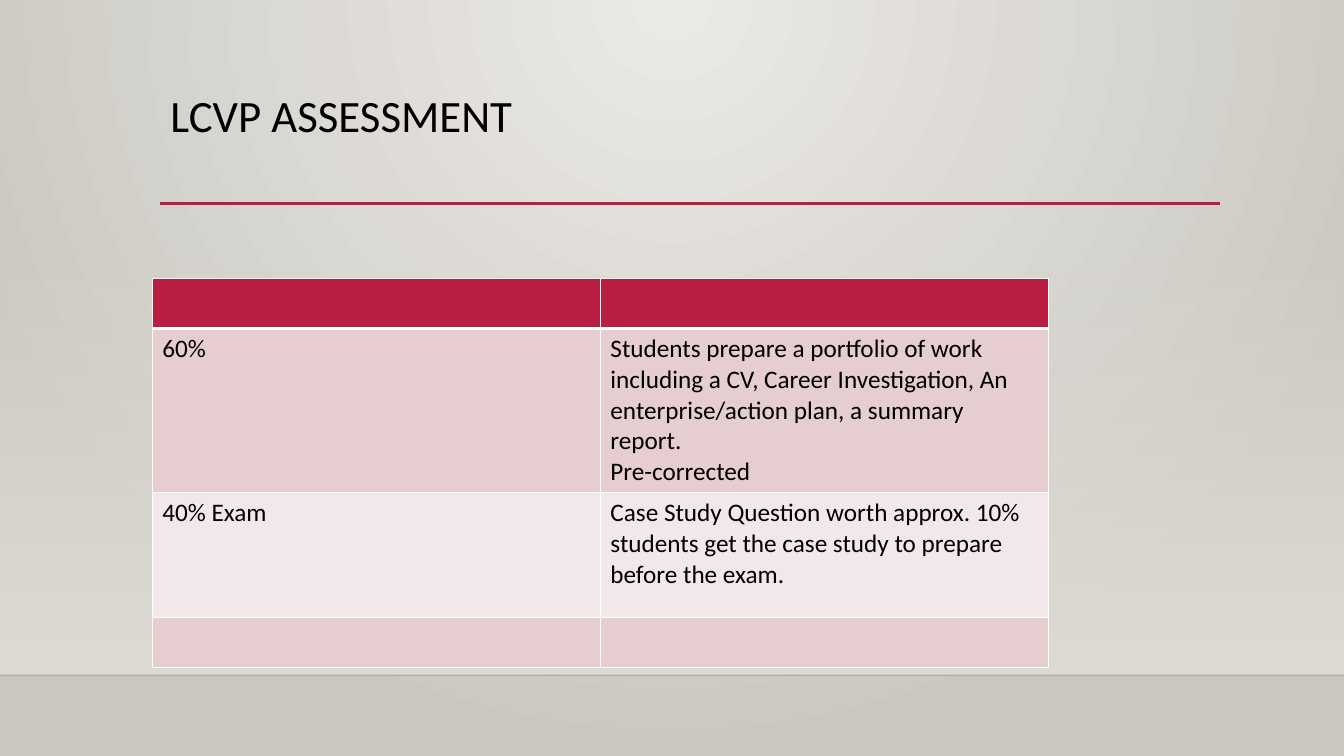
from lxml import etree
from pptx import Presentation, util as u
from pptx.dml.color import RGBColor
from pptx.enum import shapes, text
from pptx.oxml import parse_xml
from pptx.oxml.ns import qn

COLOURS = {"light": "ECEAE7", "dark": "CAC7C1", "wall": "DFDBD5", "floor": "000001",
           "accent": "B71E42", "band": "E6CDCF", "pale": "F3E8E9",
           "border": "FFFFFF", "ink": "000000"}
NS = 'xmlns:a="http://schemas.openxmlformats.org/drawingml/2006/main"'
LEFT, FLOOR = 1.59, 6.7


def set_gradient(parent, stops, direction):
    """Replace the solid fill in parent by stops of (position, colour, alpha), in percent."""
    marks = "".join(
        f'<a:gs pos="{pos * 1000}"><a:srgbClr val="{COLOURS[name]}">'
        f'<a:alpha val="{alpha * 1000}"/></a:srgbClr></a:gs>' for pos, name, alpha in stops)
    solid = parent.find(qn("a:solidFill"))
    parent.replace(solid, parse_xml(
        f'<a:gradFill {NS} rotWithShape="1"><a:gsLst>{marks}</a:gsLst>{direction}</a:gradFill>'))


def style_font(paragraph, size):
    values = {"size": u.Pt(size), "name": "Calibri", "bold": False}
    for key, value in values.items():
        setattr(paragraph.font, key, value)
    paragraph.font.color.rgb = RGBColor.from_string(COLOURS["ink"])


prs = Presentation()
prs.slide_width, prs.slide_height = u.Inches(13.33), u.Inches(7.5)
slide = prs.slides.add_slide(prs.slide_layouts[5])

# Background and wall
backdrop = slide.background.fill
backdrop.solid()
backdrop.fore_color.rgb = RGBColor.from_string(COLOURS["dark"])
set_gradient(slide.element.find(".//" + qn("p:bgPr")),
             [(0, "light", 100), (100, "dark", 100)],
             '<a:path path="circle"><a:fillToRect l="43000" r="43000" b="100000"/></a:path>')

wall = slide.shapes.add_shape(shapes.MSO_SHAPE.RECTANGLE, 0, u.Inches(2.21),
                              prs.slide_width, u.Inches(FLOOR - 2.21))
wall.shadow.inherit = False
wall.line.fill.background()
wall.fill.solid()
set_gradient(wall.element.spPr, [(0, "wall", 0), (100, "wall", 100)],
             '<a:lin ang="5400000" scaled="0"/>')

# Floor edge and title rule
for start, end, y, name, width, alpha in [(0, 13.33, FLOOR, "floor", 1, 20),
                                          (LEFT, 12.1, 2.02, "accent", 2.5, 100)]:
    rule = slide.shapes.add_connector(shapes.MSO_CONNECTOR.STRAIGHT, u.Inches(start),
                                      u.Inches(y), u.Inches(end), u.Inches(y))
    rule.line.width = u.Pt(width)
    rule.line.color.rgb = RGBColor.from_string(COLOURS[name])
    colour = rule.element.spPr.find(".//" + qn("a:srgbClr"))
    etree.SubElement(colour, qn("a:alpha")).set("val", str(alpha * 1000))
    etree.SubElement(rule.element.spPr, qn("a:effectLst"))

# Title
title = slide.shapes.title
title.left, title.top, title.width, title.height = map(u.Inches, (LEFT, 0.88, 10.5, 1.15))
title.text_frame.text = "LCVP ASSESSMENT"
title.text_frame.vertical_anchor = text.MSO_ANCHOR.TOP
heading = title.text_frame.paragraphs[0]
heading.alignment = text.PP_ALIGN.LEFT
heading.line_spacing = 0.9
style_font(heading, 32)

# Assessment table: height, fill, left text, right text
ROWS = [
    (0.5, "accent", "", ""),
    (1.61, "band", "60%",
     "Students prepare a portfolio of work including a CV, Career Investigation, "
     "An enterprise/action plan, a summary report.\nPre-corrected"),
    (1.24, "pale", "40% Exam",
     "Case Study Question worth approx. 10% students get the case study to prepare "
     "before the exam."),
    (0.5, "band", "", ""),
]
assessment = slide.shapes.add_table(len(ROWS), 2, u.Inches(1.51), u.Inches(2.76),
                                    u.Inches(8.89), u.Inches(3.86)).table
for r, (height, fill, *entries) in enumerate(ROWS):
    assessment.rows[r].height = u.Inches(height)
    for c, entry in enumerate(entries):
        cell = assessment.cell(r, c)
        cell.text = entry
        for paragraph in cell.text_frame.paragraphs:
            style_font(paragraph, 18)
        borders = {"L": 1, "R": 1, "T": 3 if r == 1 else 1, "B": 3 if r == 0 else 1}
        for side, width in borders.items():
            cell._tc.get_or_add_tcPr().append(parse_xml(
                f'<a:ln{side} {NS} w="{u.Pt(width)}"><a:solidFill>'
                f'<a:srgbClr val="{COLOURS["border"]}"/></a:solidFill></a:ln{side}>'))
        cell.fill.solid()
        cell.fill.fore_color.rgb = RGBColor.from_string(COLOURS[fill])

prs.save("out.pptx")
